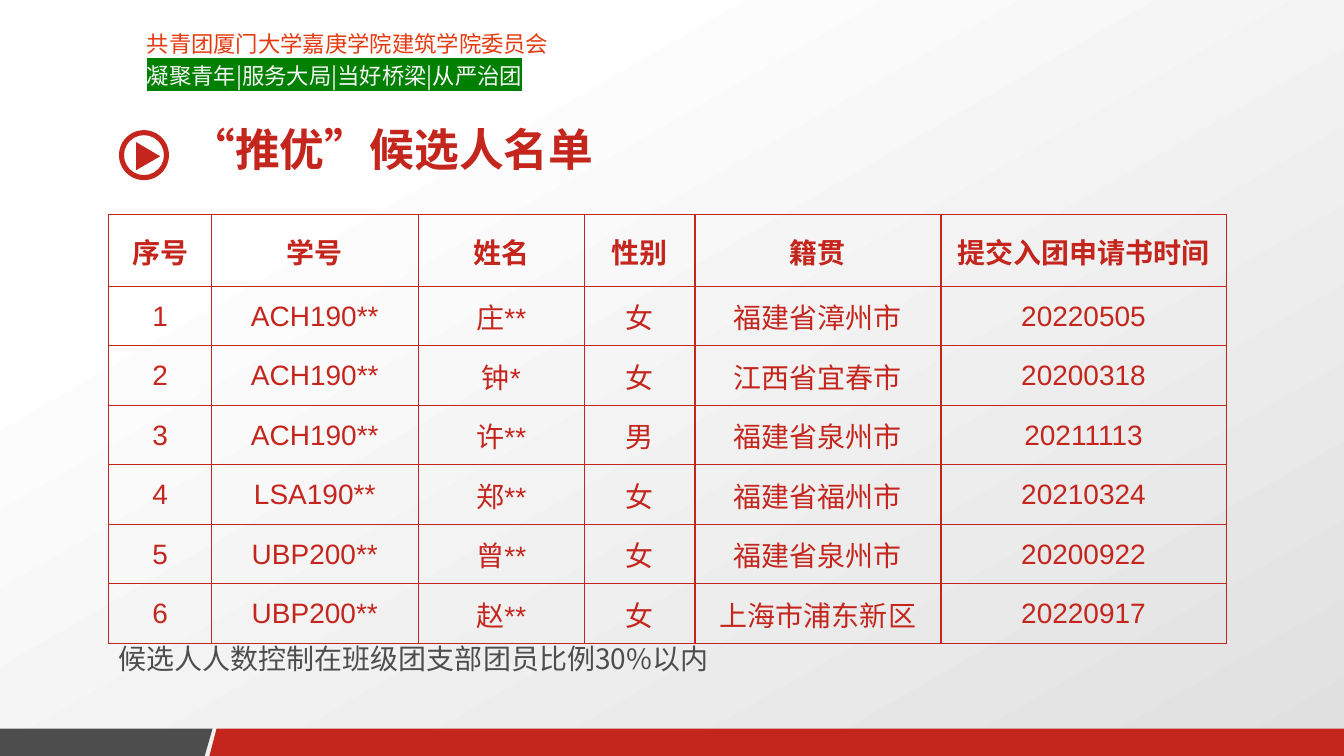
from lxml.etree import SubElement
from pptx import Presentation
from pptx.dml.color import RGBColor
from pptx.enum.shapes import MSO_SHAPE
from pptx.enum.text import MSO_ANCHOR, PP_ALIGN
from pptx.oxml import parse_xml
from pptx.oxml.ns import nsdecls, qn
from pptx.util import Cm, Pt

# Content
HEADER = ["共青团厦门大学嘉庚学院建筑学院委员会", "凝聚青年|服务大局|当好桥梁|从严治团"]
TITLE = "“推优”候选人名单"
NOTE = "候选人人数控制在班级团支部团员比例30%以内"
CANDIDATES = [
    ("序号", "学号", "姓名", "性别", "籍贯", "提交入团申请书时间"),
    ("1", "ACH190**", "庄**", "女", "福建省漳州市", "20220505"),
    ("2", "ACH190**", "钟*", "女", "江西省宜春市", "20200318"),
    ("3", "ACH190**", "许**", "男", "福建省泉州市", "20211113"),
    ("4", "LSA190**", "郑**", "女", "福建省福州市", "20210324"),
    ("5", "UBP200**", "曾**", "女", "福建省泉州市", "20200922"),
    ("6", "UBP200**", "赵**", "女", "上海市浦东新区", "20220917"),
]

# Layout in centimetres
WIDTH, HEIGHT = 33.88, 19.05
FOOTER_TOP = 18.36
COLUMN_WIDTHS = [2.59, 5.21, 4.19, 2.79, 6.2, 7.19]
HEADER_ROW, DATA_ROW = 1.8, 1.5

RED, GREY = "C4261D", "4D4D4D"
CJK_FONT, LATIN_FONT = "Noto Sans CJK SC", "Arial"


def color(value):
    return RGBColor.from_string(value)


def format_run(run, size, fill, font=CJK_FONT, bold=False, highlight=None):
    run.font.size = Pt(size)
    run.font.bold = bold
    run.font.color.rgb = color(fill)
    properties = run.font._element
    if highlight:
        mark = SubElement(properties, qn("a:highlight"))
        SubElement(mark, qn("a:srgbClr"), val=highlight)
    run.font.name = font
    SubElement(properties, qn("a:ea"), typeface=CJK_FONT)


def add_text(slide, box, lines, spacing):
    """Each line is (text, size, colour, bold, highlight)."""
    frame = slide.shapes.add_textbox(*map(Cm, box)).text_frame
    frame.word_wrap = True
    frame.text = "\n".join(line[0] for line in lines)
    for paragraph, (_, size, fill, bold, highlight) in zip(frame.paragraphs, lines):
        paragraph.line_spacing = spacing
        format_run(paragraph.runs[0], size, fill, bold=bold, highlight=highlight)
    return frame


def paint(shape, fill):
    shape.shadow.inherit = False
    shape.fill.solid()
    shape.fill.fore_color.rgb = color(fill)
    shape.line.fill.background()


def add_polygon(slide, points, fill):
    corners = [(Cm(x), Cm(y)) for x, y in points]
    builder = slide.shapes.build_freeform(*corners[0], scale=1.0)
    builder.add_line_segments(corners[1:], close=True)
    paint(builder.convert_to_shape(), fill)


def add_borders(cell, fill):
    properties = cell._tc.get_or_add_tcPr()
    for index, side in enumerate(("lnL", "lnR", "lnT", "lnB")):
        properties.insert(index, parse_xml(
            f'<a:{side} {nsdecls("a")} w="{Pt(1)}"><a:solidFill>'
            f'<a:srgbClr val="{fill}"/></a:solidFill></a:{side}>'))


def add_candidate_table(slide):
    heights = [HEADER_ROW] + [DATA_ROW] * (len(CANDIDATES) - 1)
    frame = slide.shapes.add_table(
        len(CANDIDATES), len(COLUMN_WIDTHS), Cm(2.74), Cm(5.41),
        Cm(sum(COLUMN_WIDTHS)), Cm(sum(heights)))
    table = frame.table
    table.first_row = table.horz_banding = False
    for column, width in zip(table.columns, COLUMN_WIDTHS):
        column.width = Cm(width)
    for row_index, (row, height) in enumerate(zip(table.rows, heights)):
        row.height = Cm(height)
        for cell, text in zip(row.cells, CANDIDATES[row_index]):
            cell.text_frame.text = text
            cell.vertical_anchor = MSO_ANCHOR.MIDDLE
            cell.margin_left = cell.margin_top = cell.margin_right = Cm(0.03)
            cell.margin_bottom = 0
            paragraph = cell.text_frame.paragraphs[0]
            paragraph.alignment = PP_ALIGN.CENTER
            format_run(paragraph.runs[0], 20, RED, LATIN_FONT, bold=row_index == 0)
            cell.fill.background()
            add_borders(cell, RED)


def main():
    presentation = Presentation()
    presentation.slide_width, presentation.slide_height = Cm(WIDTH), Cm(HEIGHT)
    slide = presentation.slides.add_slide(presentation.slide_layouts[6])

    # Background gradient
    background = slide.background.fill
    background.gradient()
    background.gradient_angle = 300
    for stop, (position, fill) in zip(background.gradient_stops,
                                      [(0.23, "FEFEFE"), (1, "E0E0E0")]):
        stop.position = position
        stop.color.rgb = color(fill)

    # Committee name and motto
    header = add_text(slide, (3.45, 0.74, 15.19, 1.83), [
        (HEADER[0], 16, "E43C11", False, None),
        (HEADER[1], 16, "F8F8F8", False, "008000")], 0.86)
    for paragraph in header.paragraphs:
        paragraph.alignment = PP_ALIGN.JUSTIFY
        paragraph.space_after = Pt(6)

    # Footer bands
    add_polygon(slide, [(0, FOOTER_TOP), (5.36, FOOTER_TOP), (5.16, HEIGHT),
                        (0, HEIGHT)], GREY)
    add_polygon(slide, [(5.46, FOOTER_TOP), (WIDTH, FOOTER_TOP), (WIDTH, HEIGHT),
                        (5.28, HEIGHT)], RED)

    add_candidate_table(slide)

    # Title with play icon
    add_text(slide, (4.55, 3.1, 26.21, 1.63), [(TITLE, 32, RED, True, None)], 0.9)
    ring = slide.shapes.add_shape(MSO_SHAPE.DONUT, Cm(3), Cm(3.28), Cm(1.26), Cm(1.26))
    ring.adjustments[0] = 0.1
    paint(ring, RED)
    add_polygon(slide, [(3.43, 3.58), (4.04, 3.94), (3.43, 4.29)], RED)

    # Note below the table
    add_text(slide, (2.74, 16.13, 28.6, 1.12), [(NOTE, 20, GREY, False, None)], 0.9)

    presentation.save("out.pptx")


if __name__ == "__main__":
    main()
